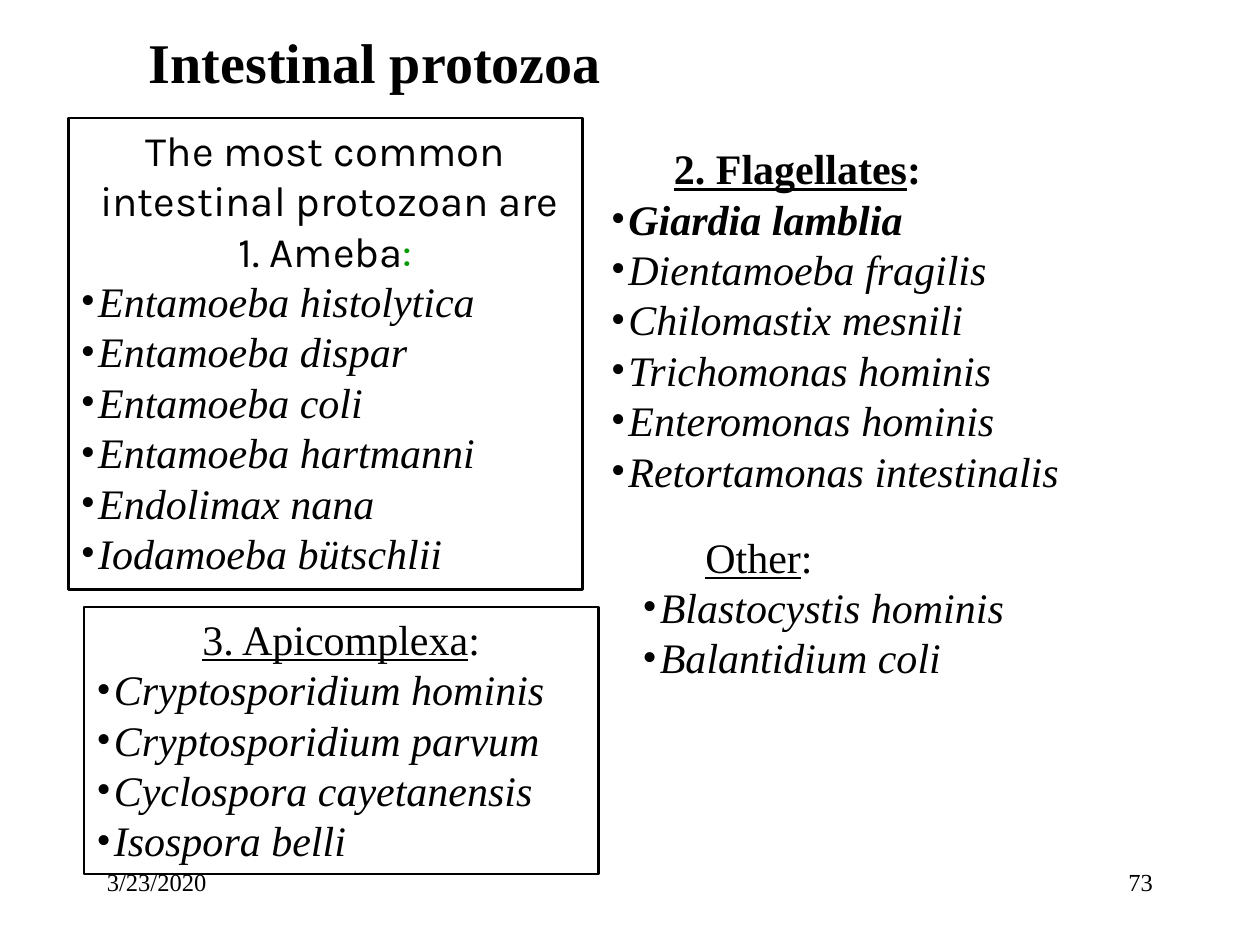
from dataclasses import dataclass

from lxml.etree import SubElement
from pptx import Presentation
from pptx.dml.color import RGBColor
from pptx.enum.shapes import MSO_SHAPE
from pptx.enum.text import MSO_ANCHOR, MSO_AUTO_SIZE, PP_ALIGN
from pptx.oxml.ns import qn
from pptx.util import Pt

BLACK = RGBColor(0x00, 0x00, 0x00)
GREEN = RGBColor(0x00, 0x99, 0x00)
SERIF = "Times New Roman"
SANS = "Karla"
HANG = 10  # hanging indent of every list line
STEP = 36  # extra indent of a second-level heading


@dataclass
class Panel:
    box: tuple[float, float, float, float]
    head: str
    names: list[str]
    intro: str = ""
    framed: bool = False
    font: str = SERIF
    under: bool = True
    colon: RGBColor = BLACK
    strong: bool = False  # bold heading and first name


PANELS = [
    Panel((39, 67.5, 294, 269.5), "1. Ameba",
          ["Entamoeba histolytica", "Entamoeba dispar", "Entamoeba coli",
           "Entamoeba hartmanni", "Endolimax nana", "Iodamoeba bütschlii"],
          intro="The most common intestinal protozoan are ",
          framed=True, font=SANS, under=False, colon=GREEN),
    Panel((48, 347, 294, 152.5), "3. Apicomplexa",
          ["Cryptosporidium hominis", "Cryptosporidium parvum",
           "Cyclospora cayetanensis", "Isospora belli"], framed=True),
    Panel((342, 78, 312, 211), "2. Flagellates",
          ["Giardia lamblia", "Dientamoeba fragilis", "Chilomastix mesnili",
           "Trichomonas hominis", "Enteromonas hominis",
           "Retortamonas intestinalis"], strong=True),
    Panel((360, 300, 258, 94.5), "Other",
          ["Blastocystis hominis", "Balantidium coli"]),
]


def write(para, text: str, size: float = 24, font: str = SERIF,
          color: RGBColor = BLACK, bold: bool = False,
          italic: bool = False, under: bool = False) -> None:
    run = para.add_run()
    run.text = text
    face = run.font
    face.size, face.name = Pt(size), font
    face.bold, face.italic, face.underline = bold, italic, under
    face.color.rgb = color


def add_box(slide, box: tuple, framed: bool = False, grow: bool = True):
    area = [Pt(side) for side in box]
    if framed:
        shape = slide.shapes.add_shape(MSO_SHAPE.RECTANGLE, *area)
        shape.shadow.inherit = False
        shape.fill.background()
        shape.line.color.rgb = BLACK
        shape.line.width = Pt(1.5)
    else:
        shape = slide.shapes.add_textbox(*area)
    frame = shape.text_frame
    frame.word_wrap = True
    frame.vertical_anchor = MSO_ANCHOR.TOP
    frame.auto_size = (MSO_AUTO_SIZE.SHAPE_TO_FIT_TEXT if grow
                       else MSO_AUTO_SIZE.NONE)
    return frame


def add_line(frame, align=PP_ALIGN.LEFT, level: int = 0, bullet: bool = False):
    first = frame.paragraphs[0]
    para = frame.add_paragraph() if first.runs else first
    para.alignment, para.level = align, level
    props = para._p.get_or_add_pPr()
    props.set("marL", str(Pt(HANG + STEP * level)))
    props.set("indent", str(-Pt(HANG)))
    if bullet:
        SubElement(props, qn("a:buFont")).set("typeface", SERIF)
        SubElement(props, qn("a:buChar")).set("char", "•")
    else:
        SubElement(props, qn("a:buNone"))
    return para


def add_panel(slide, panel: Panel) -> None:
    frame = add_box(slide, panel.box, panel.framed)
    # Framed panels centre their headings, open ones indent them
    style = {"align": PP_ALIGN.CENTER} if panel.framed else {"level": 1}
    if panel.intro:
        write(add_line(frame, **style), panel.intro, font=panel.font)
    head = add_line(frame, **style)
    write(head, panel.head, font=panel.font, bold=panel.strong,
          under=panel.under)
    write(head, ":", font=panel.font, bold=panel.strong, color=panel.colon)
    for rank, name in enumerate(panel.names):
        write(add_line(frame, bullet=True), name, italic=True,
              bold=panel.strong and rank == 0)


def add_label(slide, box: tuple, text: str, align=PP_ALIGN.LEFT,
              grow: bool = False, **style) -> None:
    para = add_box(slide, box, grow=grow).paragraphs[0]
    para.alignment = align
    write(para, text, **style)


def main() -> None:
    deck = Presentation()
    deck.slide_width, deck.slide_height = Pt(720), Pt(540)
    slide = deck.slides.add_slide(deck.slide_layouts[6])

    # Title
    add_label(slide, (78, 12, 378, 46), "Intestinal protozoa",
              grow=True, size=32, bold=True)

    # Groups of protozoa
    for panel in PANELS:
        add_panel(slide, panel)

    # Footer
    add_label(slide, (54, 492, 150, 36), "3/23/2020", size=14)
    add_label(slide, (516, 492, 150, 36), "73", PP_ALIGN.RIGHT, size=14)

    deck.save("out.pptx")


if __name__ == "__main__":
    main()
